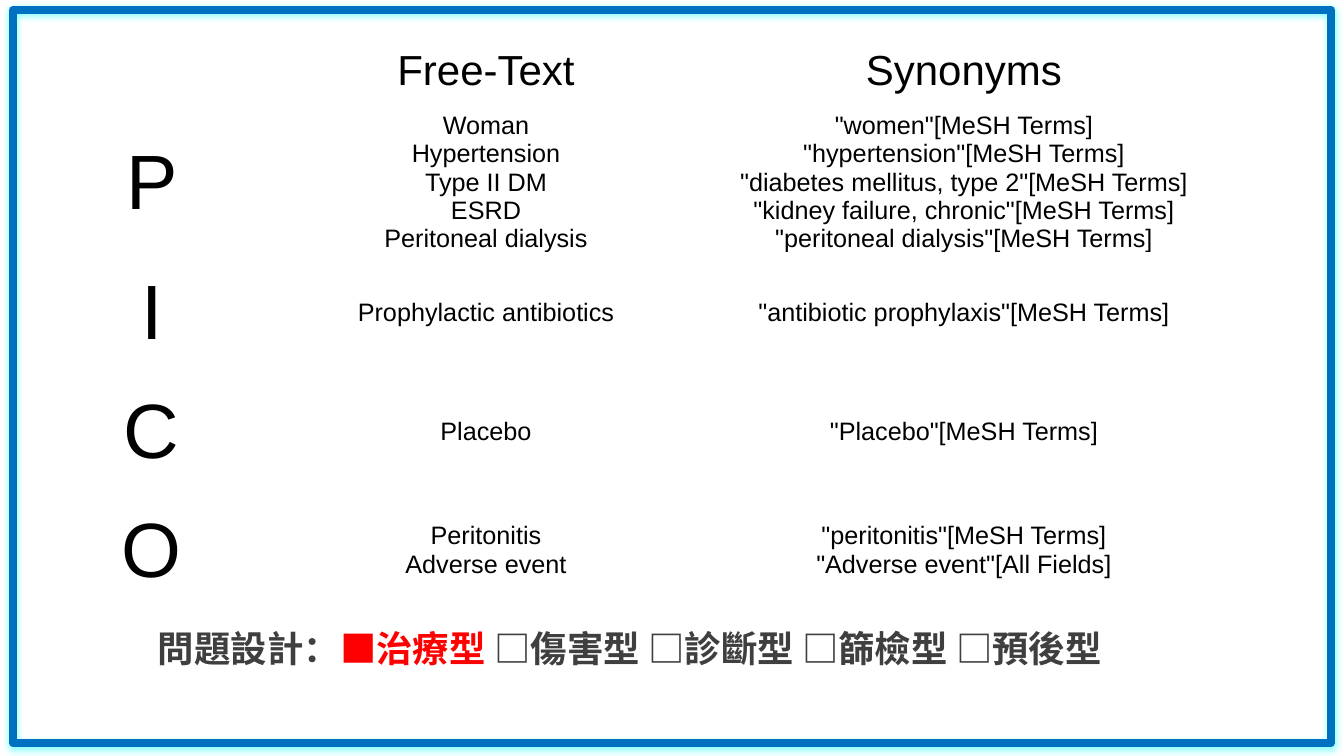
from lxml.etree import SubElement
from pptx import Presentation
from pptx.dml.color import RGBColor
from pptx.enum.shapes import MSO_SHAPE
from pptx.enum.text import MSO_ANCHOR, MSO_AUTO_SIZE, PP_ALIGN
from pptx.oxml.ns import qn
from pptx.util import Inches, Pt

LATIN_FONT = "Arial"
CHINESE_FONT = "Noto Sans CJK SC"
COLUMN_WIDTHS = (2.23, 4.4, 5.08)
HEADER_HEIGHT, ROW_HEIGHT = 0.82, 1.18
HEADER_SIZE, LETTER_SIZE, TERM_SIZE = 30, 55, 18

PICO = [
    ("P",
     ["Woman", "Hypertension", "Type II DM", "ESRD", "Peritoneal dialysis"],
     ['"women"[MeSH Terms]', '"hypertension"[MeSH Terms]',
      '"diabetes mellitus, type 2"[MeSH Terms]',
      '"kidney failure, chronic"[MeSH Terms]',
      '"peritoneal dialysis"[MeSH Terms]']),
    ("I", ["Prophylactic antibiotics"], ['"antibiotic prophylaxis"[MeSH Terms]']),
    ("C", ["Placebo"], ['"Placebo"[MeSH Terms]']),
    ("O",
     ["Peritonitis", "Adverse event"],
     ['"peritonitis"[MeSH Terms]', '"Adverse event"[All Fields]']),
]

QUESTION_TYPES = [
    ("問題設計：", "3F3F3F"),
    ("■治療型 ", "FF0000"),
    ("□傷害型 □診斷型 □篩檢型 □預後型", "3F3F3F"),
]


def paint(target, color):
    """Give a font, line or fill colour format the hex colour."""
    target.rgb = RGBColor.from_string(color)


def add_frame(page):
    """Draw the blue border with its cyan glow-like shadow."""
    box = page.shapes.add_shape(
        MSO_SHAPE.RECTANGLE, Inches(0.13), Inches(0.1), Inches(13.07), Inches(7.27))
    box.fill.background()
    paint(box.line.color, "0070C0")
    box.line.width = Pt(6)
    box.shadow.inherit = False
    effects = box._element.spPr.find(qn("a:effectLst"))
    shadow = SubElement(effects, qn("a:outerShdw"), blurRad=str(Pt(4.5)),
                        dist=str(Pt(1.5)), dir="5400000", rotWithShape="0")
    color = SubElement(shadow, qn("a:srgbClr"), val="00FFFF")
    SubElement(color, qn("a:alpha"), val="50000")


def fill_cell(cell, lines, size):
    """Write centred lines of one size into an unfilled cell."""
    cell.fill.background()
    cell.vertical_anchor = MSO_ANCHOR.MIDDLE
    cell.margin_left = cell.margin_right = Inches(0.06)
    cell.margin_top = cell.margin_bottom = 0
    cell.text = "\n".join(lines)
    for para in cell.text_frame.paragraphs:
        para.alignment = PP_ALIGN.CENTER
        para.font.name = LATIN_FONT
        para.font.size = Pt(size)
        paint(para.font.color, "000000")


def add_pico_table(page):
    """Lay out the search terms, one row for each PICO letter."""
    height = HEADER_HEIGHT + ROW_HEIGHT * len(PICO)
    table = page.shapes.add_table(
        len(PICO) + 1, len(COLUMN_WIDTHS), Inches(0.39), Inches(0.29),
        Inches(sum(COLUMN_WIDTHS)), Inches(height)).table
    table.first_row = table.horz_banding = False
    for column, width in zip(table.columns, COLUMN_WIDTHS):
        column.width = Inches(width)
    for index, row in enumerate(table.rows):
        row.height = Inches(ROW_HEIGHT if index else HEADER_HEIGHT)
    for column, heading in enumerate(["", "Free-Text", "Synonyms"]):
        fill_cell(table.cell(0, column), [heading], HEADER_SIZE)
    for row, (letter, free_text, synonyms) in enumerate(PICO, start=1):
        fill_cell(table.cell(row, 0), [letter], LETTER_SIZE)
        fill_cell(table.cell(row, 1), free_text, TERM_SIZE)
        fill_cell(table.cell(row, 2), synonyms, TERM_SIZE)


def add_question_types(page):
    """Write the checkbox line with the chosen question type in red."""
    box = page.shapes.add_textbox(
        Inches(1.16), Inches(6.16), Inches(10.18), Inches(0.54))
    box.text_frame.word_wrap = True
    box.text_frame.auto_size = MSO_AUTO_SIZE.SHAPE_TO_FIT_TEXT
    para = box.text_frame.paragraphs[0]
    para.alignment = PP_ALIGN.CENTER
    para.font.name = CHINESE_FONT
    para.font.size = Pt(26)
    para.font.bold = True
    for text, color in QUESTION_TYPES:
        span = para.add_run()
        span.text = text
        paint(span.font.color, color)
        SubElement(span.font._element, qn("a:ea"), typeface=CHINESE_FONT)


def main():
    """Build the PICO slide and save it."""
    deck = Presentation()
    deck.slide_width, deck.slide_height = Inches(13.33), Inches(7.5)
    page = deck.slides.add_slide(deck.slide_layouts.get_by_name("Blank"))
    add_frame(page)
    add_pico_table(page)
    add_question_types(page)
    deck.save("out.pptx")


if __name__ == "__main__":
    main()
